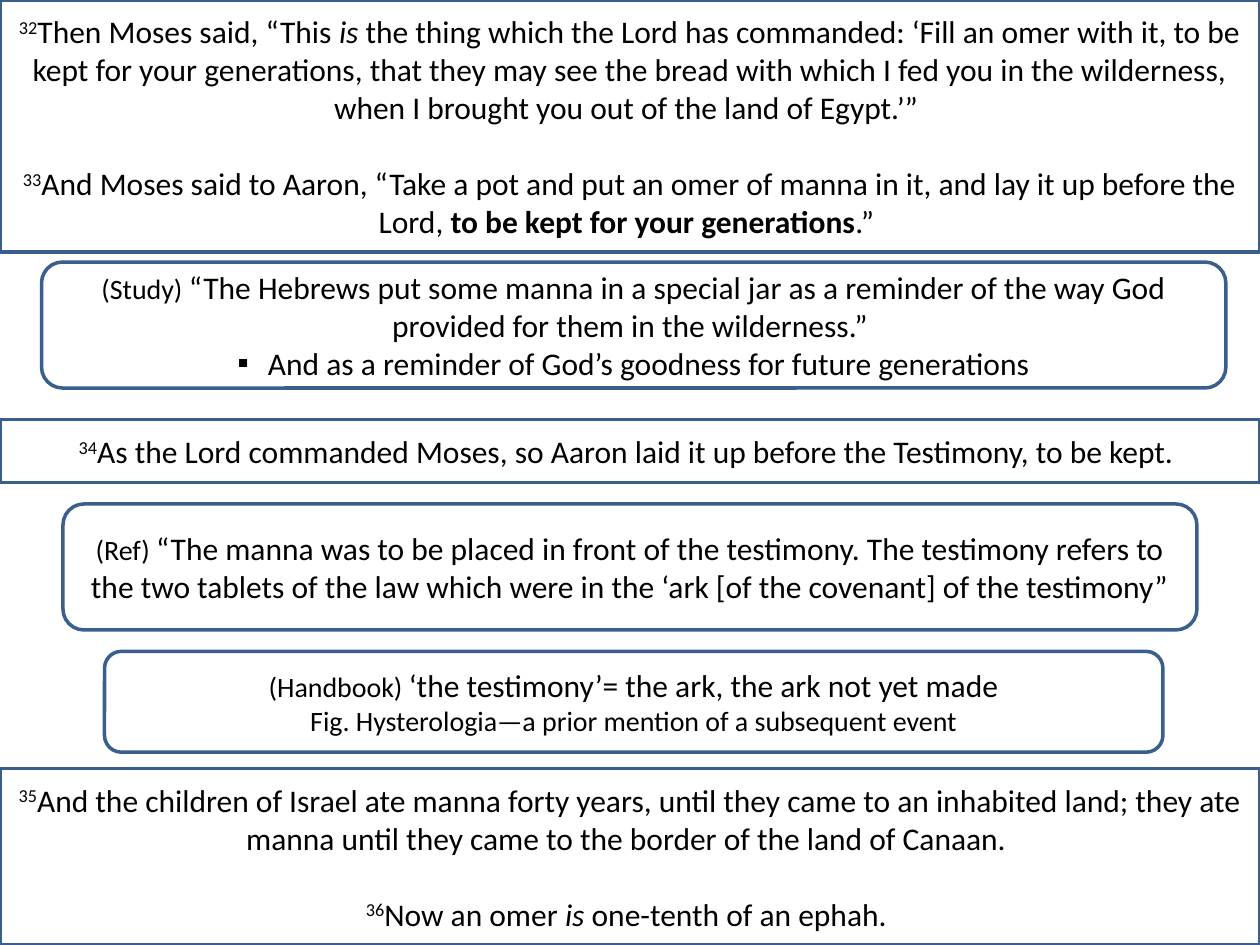
from lxml.etree import SubElement
from pptx import Presentation
from pptx.dml.color import RGBColor
from pptx.enum.shapes import MSO_SHAPE as Shape
from pptx.enum.text import MSO_ANCHOR as Anchor, PP_ALIGN as Align
from pptx.oxml.ns import qn
from pptx.util import Inches, Pt


def paint(code):
    return RGBColor.from_string(code)


class Page:
    """Holds the style and the current slide."""

    font, ink, edge, back = "Calibri", "000000", "3A5F8C", "FFFFFF"
    size, small, gap = 18, 16, 22

    def __init__(self, deck):
        self.slide = deck.slides.add_slide(deck.slide_layouts[6])

    def box(self, kind, left, top, width, height):
        box = self.slide.shapes.add_shape(
            kind, Inches(left), Inches(top), Inches(width), Inches(height))
        box.shadow.inherit = False
        box.fill.solid()
        box.fill.fore_color.rgb = paint(self.back)
        box.line.color.rgb = paint(self.edge)
        box.line.width = Pt(2)
        box.text_frame.word_wrap = True
        box.text_frame.vertical_anchor = Anchor.MIDDLE
        return box.text_frame

    def run(self, para, text, style=""):
        run = para.add_run()
        run.text = text
        font = run.font
        font.name = self.font
        font.size = Pt(self.small if style == "small" else self.size)
        font.color.rgb = paint(self.ink)
        font.bold = style == "bold"
        font.italic = style == "italic"
        if style == "super":
            font._element.set("baseline", "30000")

    def bullet(self, para):
        props = para._p.get_or_add_pPr()
        props.set("marL", str(Inches(0.24)))
        props.set("indent", str(-Inches(0.24)))
        SubElement(props, qn("a:buFont"), typeface=self.font)
        SubElement(props, qn("a:buChar"), char="▪")

    def fill(self, frame, paras, gap=0):
        for num, runs in enumerate(paras):
            para = frame.add_paragraph() if num else frame.paragraphs[0]
            para.alignment = Align.CENTER
            if num and gap:
                para.space_before = Pt(gap)
            for run in runs:
                self.run(para, *run)

    def verse(self, top, height, *paras):
        frame = self.box(Shape.RECTANGLE, 0, top, 10, height)
        self.fill(frame, paras, self.gap)

    def note(self, left, top, width, height, *paras):
        frame = self.box(Shape.ROUNDED_RECTANGLE, left, top, width, height)
        self.fill(frame, paras)
        return frame


def main():
    deck = Presentation()
    deck.slide_width, deck.slide_height = Inches(10), Inches(7.5)
    page = Page(deck)

    page.verse(
        0, 2,
        [("32", "super"), ("Then Moses said, “This ",), ("is", "italic"),
         (" the thing which the Lord has commanded: ‘Fill an omer with it, "
          "to be kept for your generations, that they may see the bread with "
          "which I fed you in the wilderness, when I brought you out of the "
          "land of Egypt.’” ",)],
        [("33", "super"),
         ("And Moses said to Aaron, “Take a pot and put an omer of manna in "
          "it, and lay it up before the Lord, ",),
         ("to be kept for your generations", "bold"), (".” ",)])

    jar = page.note(
        0.33, 2.08, 9.4, 1,
        [("(Study) ", "small"),
         ("“The Hebrews put some manna in a special jar as a reminder of the "
          "way God provided for them in the wilderness.” ",)],
        [("And as a reminder of God’s goodness for future generations",)])
    page.bullet(jar.paragraphs[1])

    page.verse(
        3.33, 0.5,
        [("34", "super"),
         ("As the Lord commanded Moses, so Aaron laid it up before the "
          "Testimony, to be kept. ",)])

    page.note(
        0.5, 4, 9, 1,
        [("(Ref) ", "small"),
         ("“The manna was to be placed in front of the testimony. The "
          "testimony refers to the two tablets of the law which were in the "
          "‘ark [of the covenant] of the testimony”",)])

    page.note(
        0.83, 5.17, 8.4, 0.8,
        [("(Handbook) ", "small"),
         ("‘the testimony’= the ark, the ark not yet made",)],
        [("Fig. Hysterologia—a prior mention of a subsequent event", "small")])

    page.verse(
        6.1, 1.4,
        [("35", "super"),
         ("And the children of Israel ate manna forty years, until they came "
          "to an inhabited land; they ate manna until they came to the border "
          "of the land of Canaan. ",)],
        [("36", "super"), ("Now an omer ",), ("is", "italic"),
         (" one-tenth of an ephah. ",)])

    deck.save("out.pptx")


if __name__ == "__main__":
    main()
